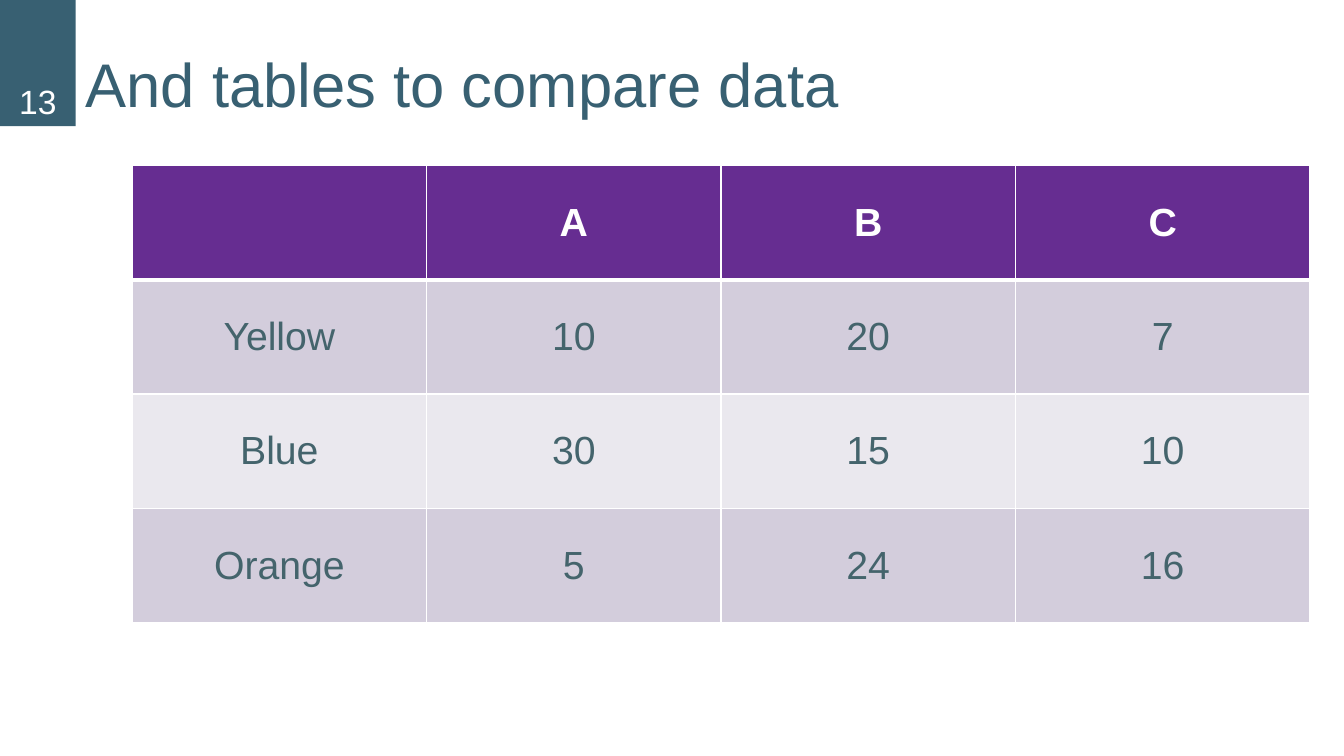
from lxml import etree
from pptx import Presentation
from pptx.dml.color import RGBColor
from pptx.enum.shapes import MSO_SHAPE
from pptx.enum.text import MSO_ANCHOR, PP_ALIGN
from pptx.oxml.ns import qn
from pptx.util import Cm, Pt

RECTANGLE = MSO_SHAPE.RECTANGLE
MIDDLE, BOTTOM = MSO_ANCHOR.MIDDLE, MSO_ANCHOR.BOTTOM
LEFT, CENTER = PP_ALIGN.LEFT, PP_ALIGN.CENTER

TITLE = "And tables to compare data"
PAGE_NUMBER = "13"
ROWS = [
    ["", "A", "B", "C"],
    ["Yellow", "10", "20", "7"],
    ["Blue", "30", "15", "10"],
    ["Orange", "5", "24", "16"],
]
COLORS = {
    "teal": "386072",
    "body": "44646C",
    "white": "FFFFFF",
    "header": "662D91",
    "odd": "D3CDDC",
    "even": "EAE8EE",
}
FONT = "Arial"
BAND_WIDTH, BAND_HEIGHT = Cm(1.91), Cm(3.18)
TITLE_WIDTH = Cm(31.12)
TABLE_LEFT, TABLE_TOP = Cm(3.33), Cm(4.17)
COLUMN_WIDTH, ROW_HEIGHT = Cm(7.42), Cm(2.88)


def rgb(name):
    return RGBColor.from_string(COLORS[name])


def write(frame, text, size, color, bold=False, align=CENTER, spacing=None):
    para = frame.paragraphs[0]
    para.alignment = align
    para.line_spacing = spacing
    span = para.add_run()
    span.text = text
    span.font.name = FONT
    span.font.size = Pt(size)
    span.font.bold = bold
    span.font.color.rgb = rgb(color)


def add_border(cell, side, points):
    properties = cell._tc.get_or_add_tcPr()
    line = etree.SubElement(properties, qn(f"a:ln{side}"), w=str(Pt(points)))
    fill = etree.SubElement(line, qn("a:solidFill"))
    etree.SubElement(fill, qn("a:srgbClr"), val=COLORS["white"])


def add_title(page):
    box = page.shapes.add_textbox(BAND_WIDTH, 0, TITLE_WIDTH, BAND_HEIGHT)
    frame = box.text_frame
    frame.word_wrap = True
    frame.vertical_anchor = BOTTOM
    write(frame, TITLE, 44, "teal", align=LEFT, spacing=0.9)


def add_table(page):
    row_count, column_count = len(ROWS), len(ROWS[0])
    table = page.shapes.add_table(
        row_count, column_count, TABLE_LEFT, TABLE_TOP,
        COLUMN_WIDTH * column_count, ROW_HEIGHT * row_count,
    ).table
    for column in table.columns:
        column.width = COLUMN_WIDTH
    for index, values in enumerate(ROWS):
        table.rows[index].height = ROW_HEIGHT
        header = index == 0
        band = "header" if header else "odd" if index % 2 else "even"
        borders = {"L": 1, "R": 1, "T": 3 if index == 1 else 1, "B": 3 if header else 1}
        for position, value in enumerate(values):
            cell = table.cell(index, position)
            for side, points in borders.items():
                add_border(cell, side, points)
            cell.fill.solid()
            cell.fill.fore_color.rgb = rgb(band)
            cell.vertical_anchor = MIDDLE
            if value:
                write(cell.text_frame, value, 28, "white" if header else "body", bold=header)


def add_page_number(page):
    band = page.shapes.add_shape(RECTANGLE, 0, 0, BAND_WIDTH, BAND_HEIGHT)
    band.shadow.inherit = False
    band.fill.solid()
    band.fill.fore_color.rgb = rgb("teal")
    band.line.fill.background()
    band.text_frame.vertical_anchor = BOTTOM
    write(band.text_frame, PAGE_NUMBER, 24, "white")


def main():
    deck = Presentation()
    deck.slide_width, deck.slide_height = Cm(33.87), Cm(19.05)
    page = deck.slides.add_slide(deck.slide_layouts[6])
    add_title(page)
    add_table(page)
    add_page_number(page)
    deck.save("out.pptx")


if __name__ == "__main__":
    main()
